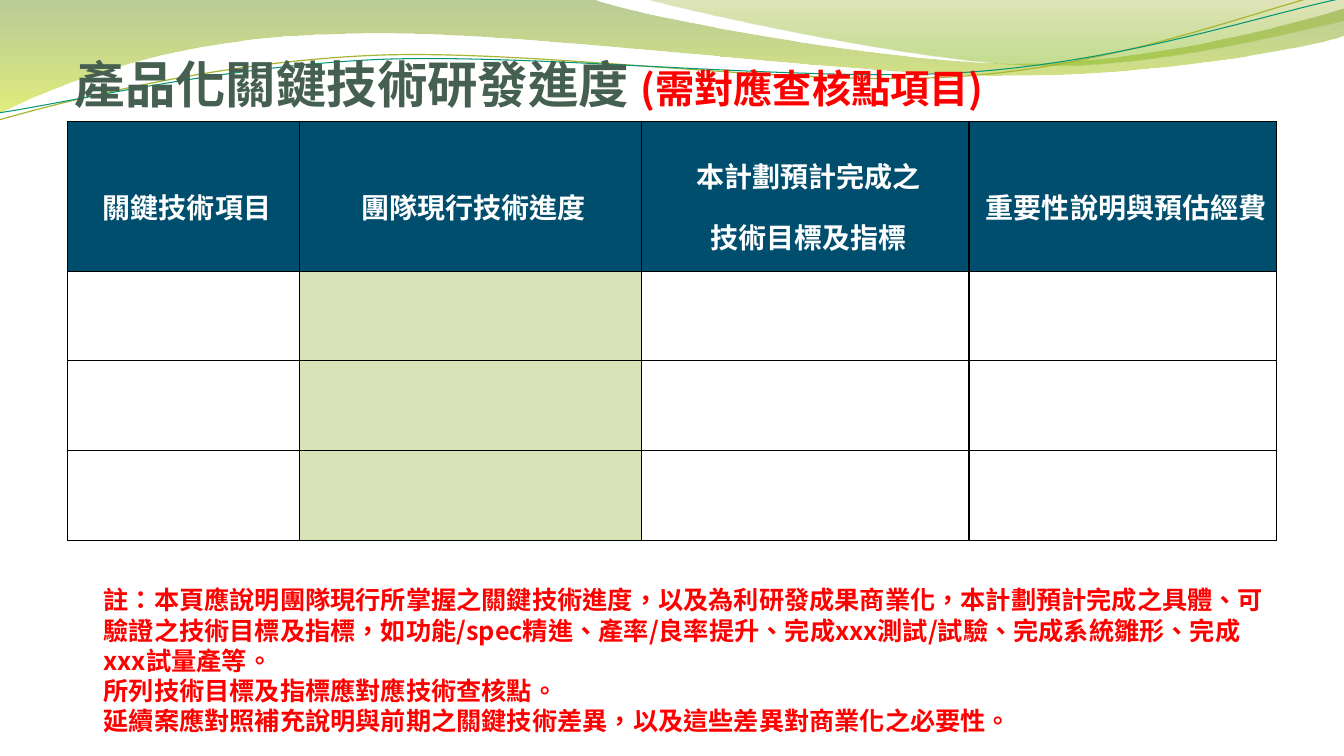
import math

from lxml import etree
from pptx import Presentation
from pptx import util as u
from pptx.dml import color
from pptx.enum import text
from pptx.oxml import ns

SANS_SC, SANS_TC = "Noto Sans CJK SC", "Noto Sans CJK TC"
RED, WHITE, NAVY, SAGE, BLACK = "FF0000", "FFFFFF", "004E6E", "D8E4B7", "000000"
HEADERS = [["關鍵技術項目"], ["團隊現行技術進度"],
           ["本計劃預計完成之", "技術目標及指標"], ["重要性說明與預估經費"]]
COLUMN_WIDTHS = [2.3, 3.39, 3.25, 3.05]
ROW_HEIGHTS = [1.49, 0.89, 0.89, 0.89]
CURVE_TILT = 2.7
NOTES = [
    "註：本頁應說明團隊現行所掌握之關鍵技術進度，以及為利研發成果商業化，本計劃預計完成之具體、"
    "可驗證之技術目標及指標，如功能/spec精進、產率/良率提升、完成xxx測試/試驗、完成系統雛形、"
    "完成xxx試量產等。",
    "所列技術目標及指標應對應技術查核點。",
    "延續案應對照補充說明與前期之關鍵技術差異，以及這些差異對商業化之必要性。",
]
GREEN_WAVE = [
    (0, 0), (5.87, -0.01),
    (6.34, 0.17, 8.84, 0.63, 10.11, 0.63), (11.37, 0.63, 12.77, 0.26, 13.33, 0.09),
    (13.34, 0.36),
    (13.11, 0.44, 11.59, 0.76, 9.94, 0.75), (8.29, 0.75, 5.09, 0.28, 3.43, 0.34),
    (1.72, 0.36, 0.61, 0.83, -0.02, 1.13), (0, 0),
]
CORNER_WAVE = [
    (6.38, -0.01),
    (6.79, 0.11, 9.09, 0.62, 10.25, 0.65), (11.4, 0.69, 12.82, 0.32, 13.33, 0.21),
    (13.33, 0), (6.38, -0.01),
]
OLIVE_CURVE = [
    (-0.01, 1.19),
    (0.63, 1.01, 2.1, 0.62, 3.69, 0.55), (5.27, 0.48, 7.89, 0.87, 9.49, 0.76),
    (11.1, 0.66, 12.51, 0.08, 13.3, -0.1),
]
TEAL_CURVE = [
    (-0.01, 1.12),
    (0.62, 1.03, 2.18, 0.66, 3.77, 0.59), (5.37, 0.53, 7.96, 0.82, 9.55, 0.72),
    (11.14, 0.62, 12.55, 0.14, 13.33, -0.02),
]


def rgb(value):
    """Turn a hex string into a colour."""
    return color.RGBColor.from_string(value)


def add_element(parent, tag, **attributes):
    """Append a drawing element with attributes."""
    return etree.SubElement(parent, ns.qn(tag), attributes)


def add_run(paragraph, content, size, hue, font=SANS_SC):
    """Add one bold run in a Chinese font."""
    run = paragraph.add_run()
    run.text = content
    run.font.size, run.font.bold, run.font.name = u.Pt(size), True, font
    run.font.color.rgb = rgb(hue)
    properties = run.font._element
    properties.set("lang", "zh-TW")
    add_element(properties, "a:ea", typeface=font)


def format_paragraph(paragraph, alignment):
    """Set alignment, wide line spacing and a small left indent."""
    paragraph.alignment = alignment
    paragraph.line_spacing = 1.5
    properties = paragraph._p.get_or_add_pPr()
    properties.set("marL", str(u.Inches(0.07)))
    properties.set("indent", "0")


def turn_point(point, center, degrees):
    """Turn a point clockwise about a center."""
    x, y = point[0] - center[0], point[1] - center[1]
    sine, cosine = math.sin(math.radians(degrees)), math.cos(math.radians(degrees))
    return center[0] + x * cosine - y * sine, center[1] + x * sine + y * cosine


def add_outline(slide, segments, close, center=(0, 0), tilt=0):
    """Draw a freeform of straight and cubic segments."""
    pairs = [segment[i:i + 2] for segment in segments for i in range(0, len(segment), 2)]
    turned = [turn_point(pair, center, tilt) for pair in pairs]
    points = [(u.Inches(x), u.Inches(y)) for x, y in turned]
    builder = slide.shapes.build_freeform(*points[0])
    builder.add_line_segments(points[1:], close=close)
    shape = builder.convert_to_shape()
    shape.shadow.inherit = False
    shape.rotation = -tilt
    lines = list(shape.element.iter(ns.qn("a:lnTo")))
    for segment in segments[1:]:
        count = len(segment) // 2
        group, lines = lines[:count], lines[count:]
        if count == 3:
            cubic = etree.Element(ns.qn("a:cubicBezTo"))
            group[0].addprevious(cubic)
            for line in group:
                cubic.append(line[0])
                line.getparent().remove(line)
    return shape


def add_wave(slide, segments, stops):
    """Draw a band with a see-through vertical gradient."""
    shape = add_outline(slide, segments, True)
    shape.line.fill.background()
    gradient = etree.Element(ns.qn("a:gradFill"), rotWithShape="1")
    stop_list = add_element(gradient, "a:gsLst")
    for position, hue, opacity in stops:
        stop = add_element(stop_list, "a:gs", pos=str(position * 1000))
        swatch = add_element(stop, "a:srgbClr", val=hue)
        add_element(swatch, "a:alpha", val=str(opacity * 1000))
    add_element(gradient, "a:lin", ang="5400000", scaled="0")
    shape.element.spPr.find(ns.qn("a:custGeom")).addnext(gradient)
    return shape


def add_curve(slide, segments, center, hue, width):
    """Draw a thin, slightly tilted open curve."""
    shape = add_outline(slide, segments, False, center, CURVE_TILT)
    shape.fill.background()
    shape.line.color.rgb = rgb(hue)
    shape.line.width = u.Pt(width)
    return shape


def add_banner(slide):
    """Group the waves and curves along the top."""
    slide.shapes.add_group_shape([
        add_wave(slide, GREEN_WAVE, [(0, "668F1B", 45), (100, "CAE00E", 55)]),
        add_wave(slide, CORNER_WAVE,
                 [(0, "99A719", 30), (80, "80B814", 45), (100, "80B814", 45)]),
        add_curve(slide, OLIVE_CURVE, (6.65, 0.57), "A8B532", 0.85),
        add_curve(slide, TEAL_CURVE, (6.67, 0.59), "029676", 0.75),
    ])


def format_title(slide):
    """Place the title in front of the banner and fill it."""
    title = slide.shapes.title
    title.element.getparent().append(title.element)
    title.left, title.top = u.Inches(0.67), u.Inches(0.36)
    title.width, title.height = u.Inches(12), u.Inches(0.58)
    frame = title.text_frame
    frame.word_wrap, frame.auto_size = True, text.MSO_AUTO_SIZE.NONE
    frame.vertical_anchor = text.MSO_ANCHOR.MIDDLE
    frame.margin_left = frame.margin_right = frame.margin_bottom = 0
    frame.margin_top = u.Inches(0.05)
    paragraph = frame.paragraphs[0]
    format_paragraph(paragraph, text.PP_ALIGN.LEFT)
    add_run(paragraph, "產品化關鍵技術研發進度 ", 36, "455F51", SANS_TC)
    add_run(paragraph, "(需對應查核點項目)", 28, RED)


def format_cell(cell, hue, inner_edge):
    """Fill a cell and draw its borders, heavier on the inner edge."""
    cell.fill.solid()
    cell.fill.fore_color.rgb = rgb(hue)
    properties = cell._tc.get_or_add_tcPr()
    for index, side in enumerate("LRTB"):
        width = u.Pt(1 if side == inner_edge else 0.75)
        border = etree.Element(ns.qn(f"a:ln{side}"), w=str(width))
        add_element(add_element(border, "a:solidFill"), "a:srgbClr", val=BLACK)
        properties.insert(index, border)


def write_header(cell, lines, side_margin):
    """Write centred header lines in a cell."""
    cell.vertical_anchor = text.MSO_ANCHOR.MIDDLE
    cell.margin_top = cell.margin_bottom = 0
    cell.margin_left = cell.margin_right = u.Inches(side_margin)
    frame = cell.text_frame
    for index, line in enumerate(lines):
        paragraph = frame.add_paragraph() if index else frame.paragraphs[0]
        format_paragraph(paragraph, text.PP_ALIGN.CENTER)
        add_run(paragraph, line, 20, WHITE)


def add_progress_table(slide):
    """Add the technology progress table."""
    table = slide.shapes.add_table(
        len(ROW_HEIGHTS), len(COLUMN_WIDTHS), u.Inches(0.67), u.Inches(1.2),
        u.Inches(sum(COLUMN_WIDTHS)), u.Inches(sum(ROW_HEIGHTS))).table
    for column, width in zip(table.columns, COLUMN_WIDTHS):
        column.width = u.Inches(width)
    for row_index, height in enumerate(ROW_HEIGHTS):
        table.rows[row_index].height = u.Inches(height)
        for column_index, lines in enumerate(HEADERS):
            cell = table.cell(row_index, column_index)
            body_hue = SAGE if column_index == 1 else WHITE
            format_cell(cell, body_hue if row_index else NAVY,
                        {2: "R", 3: "L"}.get(column_index))
            if row_index == 0:
                write_header(cell, lines, 0.05 if column_index == 1 else 0)


def add_notes_box(slide):
    """Add the red remarks under the table."""
    box = slide.shapes.add_textbox(u.Inches(0.93), u.Inches(5.75),
                                   u.Inches(11.82), u.Inches(1.62))
    frame = box.text_frame
    frame.word_wrap, frame.auto_size = True, text.MSO_AUTO_SIZE.SHAPE_TO_FIT_TEXT
    for index, note in enumerate(NOTES):
        paragraph = frame.add_paragraph() if index else frame.paragraphs[0]
        add_run(paragraph, note, 18, RED)


def main():
    """Build and save the slide."""
    presentation = Presentation()
    presentation.slide_width, presentation.slide_height = u.Inches(13.33), u.Inches(7.5)
    slide = presentation.slides.add_slide(presentation.slide_layouts[5])
    add_banner(slide)
    add_progress_table(slide)
    format_title(slide)
    add_notes_box(slide)
    presentation.save("out.pptx")


if __name__ == "__main__":
    main()
